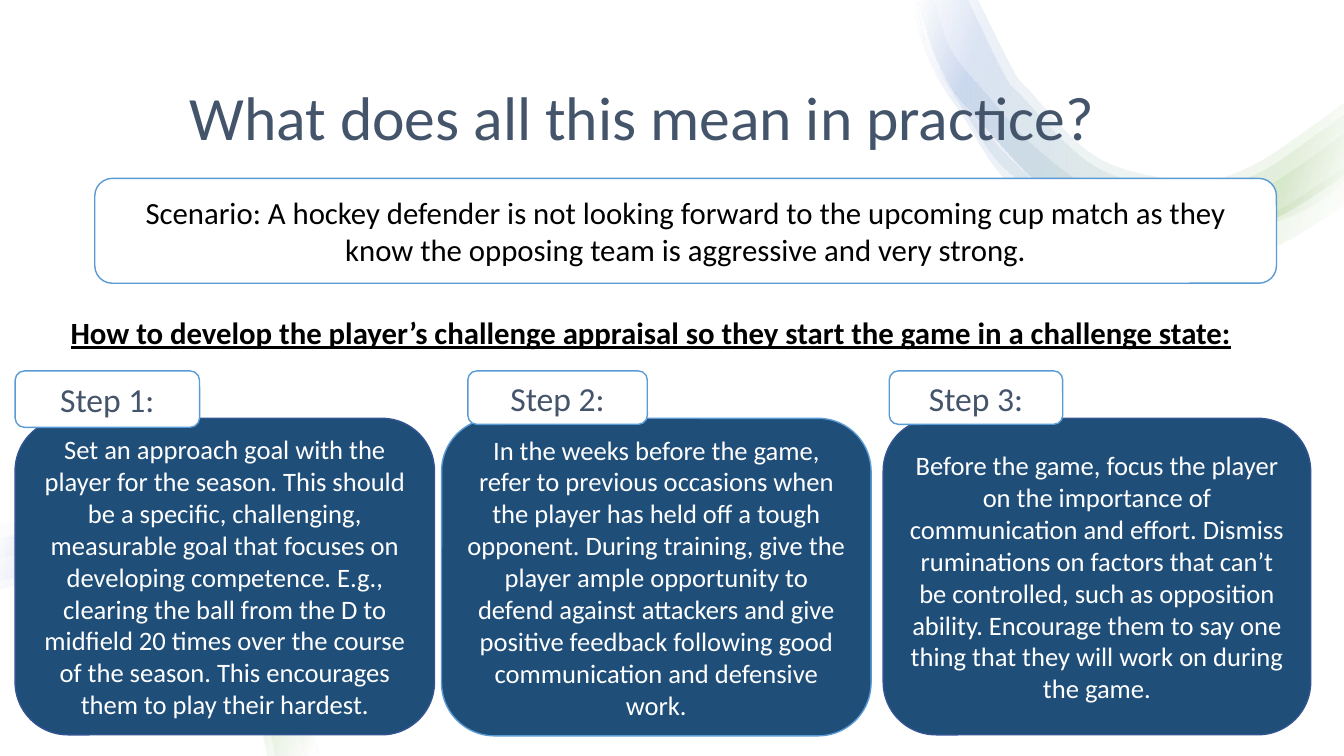
import lxml.etree
import pptx
import pptx.dml.color
import pptx.enum.shapes
import pptx.enum.text
import pptx.oxml.ns
import pptx.util

Inches = pptx.util.Inches
qn = pptx.oxml.ns.qn
ALIGN = pptx.enum.text.PP_ALIGN
MIDDLE = pptx.enum.text.MSO_ANCHOR.MIDDLE
FONT = "Calibri"
COLORS = {
    "white": "FFFFFF", "black": "000000", "slate": "44546A", "navy": "1F4E79",
    "edge": "325491", "sky": "5B9BD5", "green": "70AD47", "blue": "4472C4",
}
STOPS = [(2, "white"), (16, "green"), (85, "blue"), (100, "white")]

TOP_RIM = [(13.33, 1.71), (13.21, 1.81), (12.57, 2.19), (11.81, 2.35),
           (10.6, 2.04), (9.73, 1.22), (9.33, 0.68), (9.11, 0)]
LOW_RIM = [(3.16, 7.5), (2.83, 6.53), (2.22, 5.89), (1.4, 5.47),
           (0.49, 5.31), (0, 5.36)]
RIBBONS = [
    ([(9.1, 0), (9.2, 0.49), (9.48, 0.92), (9.97, 1.52), (10.55, 2.01),
      (11.17, 2.25), (11.85, 2.31), (12.48, 2.18), (13.33, 1.65)],
     [(13.33, 2.02), (12.61, 2.45), (11.83, 2.61), (10.91, 2.46),
      (10.01, 1.82), (9.56, 1.17), (9.28, 0.74), (9.09, 0.25), (9.07, 0)]),
    ([(9.27, 0), (9.43, 0.49), (9.8, 0.95), (10.29, 1.48), (11.04, 1.99),
      (11.8, 2.09), (12.41, 1.94), (13.33, 1.32)],
     [(13.33, 1.81), (12.8, 2.14), (11.84, 2.39), (10.94, 2.25),
      (10.02, 1.72), (9.57, 1.11), (9.19, 0.46), (9.11, 0)]),
    ([(9.6, 0), (9.95, 0.72), (10.13, 0.95), (10.88, 1.66),
      (11.81, 1.88), (12.44, 1.73), (13.08, 1.31), (13.33, 1.13)], TOP_RIM),
    ([(9.7, 0), (10.03, 0.66), (10.21, 0.9), (10.9, 1.57),
      (11.81, 1.79), (12.39, 1.65), (13.02, 1.24), (13.33, 1.01)], TOP_RIM),
    ([(0, 5.85), (0.49, 5.78), (1.28, 5.93), (1.99, 6.33), (2.48, 6.9),
      (2.65, 7.5)], LOW_RIM),
    ([(0, 5.77), (0.49, 5.7), (1.31, 5.85), (2.05, 6.27), (2.55, 6.86),
      (2.73, 7.5)], LOW_RIM),
    ([(0, 5.55), (0.39, 5.5), (1.21, 5.59), (2.3, 6.17), (2.81, 6.79),
      (3.02, 7.5)],
     [(3.16, 7.5), (2.97, 6.72), (2.44, 6.03), (1.7, 5.54), (0.83, 5.3),
      (0.38, 5.29), (0, 5.34)]),
    ([(0, 5.36), (0.39, 5.31), (1.05, 5.37), (2.05, 5.81), (2.7, 6.39),
      (3.03, 6.96), (3.14, 7.5)],
     [(3.17, 7.5), (2.8, 6.34), (2.27, 5.73), (1.78, 5.4), (0.86, 5.13),
      (0.37, 5.14), (0, 5.21)]),
]

STEPS = [
    ((0.15, 4.15, 4.16, 3.14), (0, 1.83, 0.56), "edge", 0,
     "Set an approach goal with the player for the season. This should be a "
     "specific, challenging, measurable goal that focuses on developing "
     "competence. E.g., clearing the ball from the D to midfield 20 times over "
     "the course of the season. This encourages them to play their hardest."),
    ((4.38, 4.15, 4.26, 3.15), (0.26, 1.78, 0.53), "sky", 6,
     "In the weeks before the game, refer to previous occasions when the player "
     "has held off a tough opponent. During training, give the player ample "
     "opportunity to defend against attackers and give positive feedback "
     "following good communication and defensive work."),
    ((8.76, 4.15, 4.24, 3.14), (0.06, 1.72, 0.53), "edge", 0,
     "Before the game, focus the player on the importance of communication and "
     "effort. Dismiss ruminations on factors that can’t be controlled, such as "
     "opposition ability. Encourage them to say one thing that they will work "
     "on during the game."),
]


def rgb(name):
    """Return the named colour."""
    return pptx.dml.color.RGBColor.from_string(COLORS[name])


def write(shape, text, size, color, align):
    """Set the text of a shape and format it."""
    frame = shape.text_frame
    frame.text = text
    frame.word_wrap = True
    frame.auto_size = pptx.enum.text.MSO_AUTO_SIZE.NONE
    para = frame.paragraphs[0]
    para.alignment = align
    font = para.runs[0].font
    font.name, font.size = FONT, pptx.util.Pt(size)
    font.color.rgb = rgb(color)
    return para


def place(shape, box):
    """Move a shape to a box and bring it to the front."""
    shape.left, shape.top, shape.width, shape.height = map(Inches, box)
    shape.element.getparent().append(shape.element)


def curve(knots, steps=8):
    """Return points on a smooth curve through the knots."""
    ends = [knots[0]] + knots + [knots[-1]]
    dots = [knots[0]]
    for a, b, c, d in zip(ends, ends[1:], ends[2:], ends[3:]):
        for i in range(1, steps + 1):
            t = i / steps
            dots.append(tuple(
                (2 * q + (r - p) * t + (2 * p - 5 * q + 4 * r - s) * t ** 2
                 + (3 * q - p - 3 * r + s) * t ** 3) / 2
                for p, q, r, s in zip(a, b, c, d)))
    return dots


def ribbon(slide, inner, outer):
    """Draw one faint gradient ribbon between two edges."""
    dots = [(Inches(x), Inches(y)) for x, y in curve(inner) + curve(outer)]
    pen = slide.shapes.build_freeform(*dots[0])
    pen.add_line_segments(dots[1:], close=True)
    shape = pen.convert_to_shape()
    shape.shadow.inherit = False
    shape.line.fill.background()
    shape.fill.gradient()
    shape.fill.gradient_angle = 160
    stops = shape.element.find(".//" + qn("a:gsLst"))
    for old in list(stops):
        stops.remove(old)
    for pos, name in STOPS:
        stop = lxml.etree.SubElement(stops, qn("a:gs"), pos=str(pos * 1000))
        tint = lxml.etree.SubElement(stop, qn("a:srgbClr"), val=COLORS[name])
        lxml.etree.SubElement(tint, qn("a:alpha"), val="10000")


def panel(slide, box, text, size, color, fill, line):
    """Draw a rounded box with centred text."""
    kind = pptx.enum.shapes.MSO_SHAPE.ROUNDED_RECTANGLE
    shape = slide.shapes.add_shape(kind, *map(Inches, box))
    shape.shadow.inherit = False
    shape.fill.solid()
    shape.fill.fore_color.rgb = rgb(fill)
    shape.line.color.rgb = rgb(line)
    shape.line.width = pptx.util.Pt(1)
    shape.text_frame.vertical_anchor = MIDDLE
    return write(shape, text, size, color, ALIGN.CENTER)


def heading(slide, box):
    """Fill the title placeholder."""
    title = slide.shapes.title
    place(title, box)
    para = write(title, "What does all this mean in practice?", 44, "slate", ALIGN.LEFT)
    para.line_spacing = 0.9
    title.text_frame.vertical_anchor = MIDDLE


def prompt(slide, box):
    """Fill the body placeholder with the underlined question."""
    body = slide.placeholders[1]
    place(body, box)
    para = write(body, "How to develop the player’s challenge appraisal so they "
                 "start the game in a challenge state:", 22, "black", ALIGN.LEFT)
    para.line_spacing = 0.9
    para.space_before = pptx.util.Pt(10)
    para.runs[0].font.bold = para.runs[0].font.underline = True
    props = para._p.get_or_add_pPr()
    props.set("marL", "0")
    props.set("indent", "0")
    lxml.etree.SubElement(props, qn("a:buNone"))


def step(slide, box, tab, line, after, label, text):
    """Draw a step card with its label tab above the top edge."""
    left, top, _, _ = box
    shift, width, height = tab
    para = panel(slide, box, text, 19, "white", "navy", line)
    para.space_after = pptx.util.Pt(after)
    spot = (left + shift, top - 0.47, width, height)
    panel(slide, spot, label, 24, "slate", "white", "sky")


def main():
    """Build and save the slide."""
    deck = pptx.Presentation()
    deck.slide_width, deck.slide_height = Inches(13.33), Inches(7.5)
    slide = deck.slides.add_slide(deck.slide_layouts[1])
    slide.background.fill.solid()
    slide.background.fill.fore_color.rgb = rgb("white")
    for inner, outer in RIBBONS:
        ribbon(slide, inner, outer)
    heading(slide, (1.78, 0.47, 11.5, 1.45))
    prompt(slide, (0.6, 3.1, 12.06, 0.65))
    panel(slide, (0.94, 1.77, 11.72, 1.04),
          "Scenario: A hockey defender is not looking forward to the upcoming cup "
          "match as they know the opposing team is aggressive and very strong.",
          22, "black", "white", "sky")
    for count, (box, tab, line, after, text) in enumerate(STEPS, 1):
        step(slide, box, tab, line, after, f"Step {count}:", text)
    deck.save("out.pptx")


if __name__ == "__main__":
    main()
